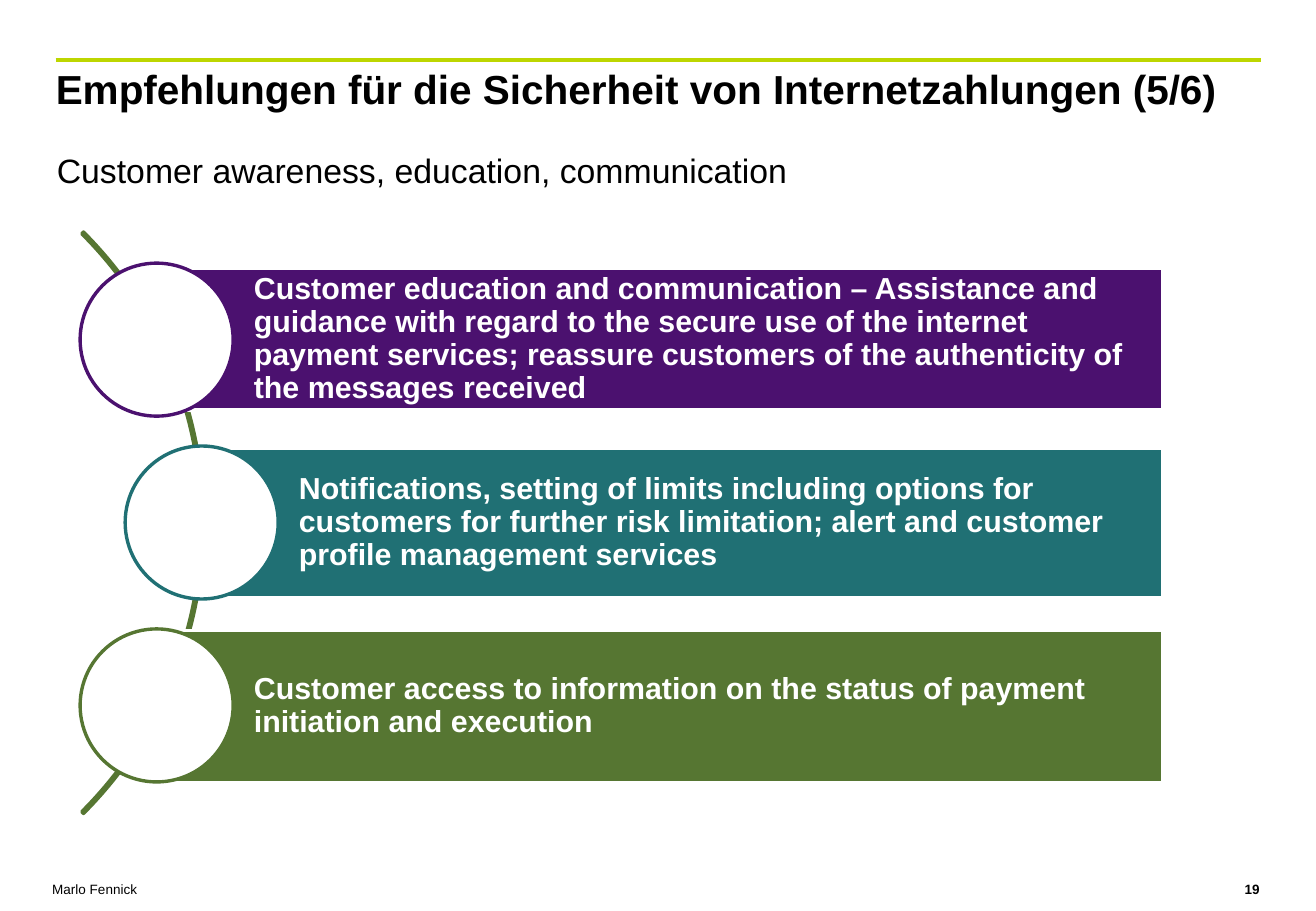
from dataclasses import dataclass

from lxml.etree import SubElement
from pptx import Presentation
from pptx.dml.color import RGBColor
from pptx.enum.shapes import MSO_CONNECTOR as Connector, MSO_SHAPE as Preset
from pptx.enum.text import MSO_ANCHOR as Anchor, PP_ALIGN as Align
from pptx.oxml.ns import qn
from pptx.shapes.autoshape import Shape
from pptx.slide import Slide
from pptx.util import Pt

BLACK = RGBColor(0x00, 0x00, 0x00)
WHITE = RGBColor(0xFF, 0xFF, 0xFF)
LIME = RGBColor(0xBD, 0xD6, 0x00)
PURPLE = RGBColor(0x4B, 0x11, 0x6F)
TEAL = RGBColor(0x20, 0x70, 0x74)
GREEN = RGBColor(0x56, 0x76, 0x32)

FONT = "Arial"
LINE_WIDTH = 2
CIRCLE_SIZE = 90.7
FIRST_CIRCLE_TOP = 156
CIRCLE_STEP = 108.4
BAR_RIGHT = 689


@dataclass(frozen=True)
class Frame:
    left: float
    top: float
    width: float
    height: float

    def lengths(self) -> tuple[Pt, Pt, Pt, Pt]:
        return Pt(self.left), Pt(self.top), Pt(self.width), Pt(self.height)


@dataclass(frozen=True)
class Label:
    text: str
    frame: Frame
    size: float
    bold: bool = False
    align: Align = Align.LEFT


@dataclass(frozen=True)
class Topic:
    text: str
    color: RGBColor
    circle_left: float
    bar_top: float
    bar_height: float


LABELS = [
    Label("Marlo Fennick", Frame(23.8, 519, 182, 22), 8),
    Label("Empfehlungen für die Sicherheit von Internetzahlungen (5/6)",
          Frame(26, 34.6, 742, 82.8), 24, bold=True),
    Label("19", Frame(571.7, 519, 182, 22), 8, bold=True, align=Align.RIGHT),
    Label("Customer awareness, education, communication",
          Frame(26.6, 85, 545.8, 31.7), 20),
]

TOPICS = [
    Topic("Customer education and communication – Assistance and guidance with "
          "regard to the secure use of the internet payment services; reassure "
          "customers of the authenticity of the messages received",
          PURPLE, 47.5, 159, 84.2),
    Topic("Notifications, setting of limits including options for customers for "
          "further risk limitation; alert and customer profile management services",
          TEAL, 74.2, 265.7, 88.6),
    Topic("Customer access to information on the status of payment initiation "
          "and execution",
          GREEN, 47.5, 373.7, 90),
]


def write_text(box: Shape, text: str, size: float, color: RGBColor, bold: bool,
               paragraph_format: dict, frame_format: dict) -> None:
    frame = box.text_frame
    for name, value in {"word_wrap": True, **frame_format}.items():
        setattr(frame, name, value)
    para = frame.paragraphs[0]
    for name, value in paragraph_format.items():
        setattr(para, name, value)
    span = para.add_run()
    span.text = text
    font_format = {"name": FONT, "size": Pt(size), "bold": bold}
    for name, value in font_format.items():
        setattr(span.font, name, value)
    span.font.color.rgb = color


def add_label(page: Slide, label: Label) -> None:
    box = page.shapes.add_textbox(*label.frame.lengths())
    write_text(box, label.text, label.size, BLACK, label.bold,
               {"alignment": label.align}, {"vertical_anchor": Anchor.TOP})


def add_preset(page: Slide, preset: Preset, frame: Frame,
               fill: RGBColor | None, line: RGBColor) -> Shape:
    shape = page.shapes.add_shape(preset, *frame.lengths())
    shape.shadow.inherit = False
    if fill is None:
        shape.fill.background()
    else:
        shape.fill.solid()
        shape.fill.fore_color.rgb = fill
    shape.line.color.rgb = line
    shape.line.width = Pt(LINE_WIDTH)
    return shape


def add_title_rule(page: Slide) -> None:
    rule = page.shapes.add_connector(
        Connector.STRAIGHT, Pt(33), Pt(35.5), Pt(747.5), Pt(35.5))
    rule.line.color.rgb = LIME
    rule.line.width = Pt(LINE_WIDTH)
    SubElement(rule._element.spPr, qn("a:effectLst"))


def add_arc(page: Slide) -> None:
    """Draw the thin arc from 315 to 45 degrees that links the circles."""
    arc = add_preset(page, Preset.BLOCK_ARC, Frame(-366.5, 66.2, 487.4, 487.4),
                     None, GREEN)
    for index, value in enumerate((189, 27, 0.003)):
        arc.adjustments[index] = value


def add_topic(page: Slide, topic: Topic, circle_top: float) -> None:
    """Draw a bar that starts at the centre of its circle."""
    bar_left = topic.circle_left + CIRCLE_SIZE / 2
    bar_frame = Frame(bar_left, topic.bar_top, BAR_RIGHT - bar_left, topic.bar_height)
    bar = add_preset(page, Preset.RECTANGLE, bar_frame, topic.color, WHITE)
    write_text(bar, topic.text, 18, WHITE, True,
               {"alignment": Align.LEFT, "line_spacing": 0.9},
               {"vertical_anchor": Anchor.MIDDLE, "margin_left": Pt(57.6),
                "margin_top": Pt(3.6), "margin_right": Pt(3.6),
                "margin_bottom": Pt(3.6)})
    add_preset(page, Preset.OVAL,
               Frame(topic.circle_left, circle_top, CIRCLE_SIZE, CIRCLE_SIZE),
               WHITE, topic.color)


def main() -> None:
    deck = Presentation()
    deck.slide_width, deck.slide_height = Pt(780), Pt(540)
    page = deck.slides.add_slide(deck.slide_layouts[6])
    add_title_rule(page)
    for label in LABELS:
        add_label(page, label)
    add_arc(page)
    for index, topic in enumerate(TOPICS):
        add_topic(page, topic, FIRST_CIRCLE_TOP + index * CIRCLE_STEP)
    deck.save("out.pptx")


if __name__ == "__main__":
    main()
